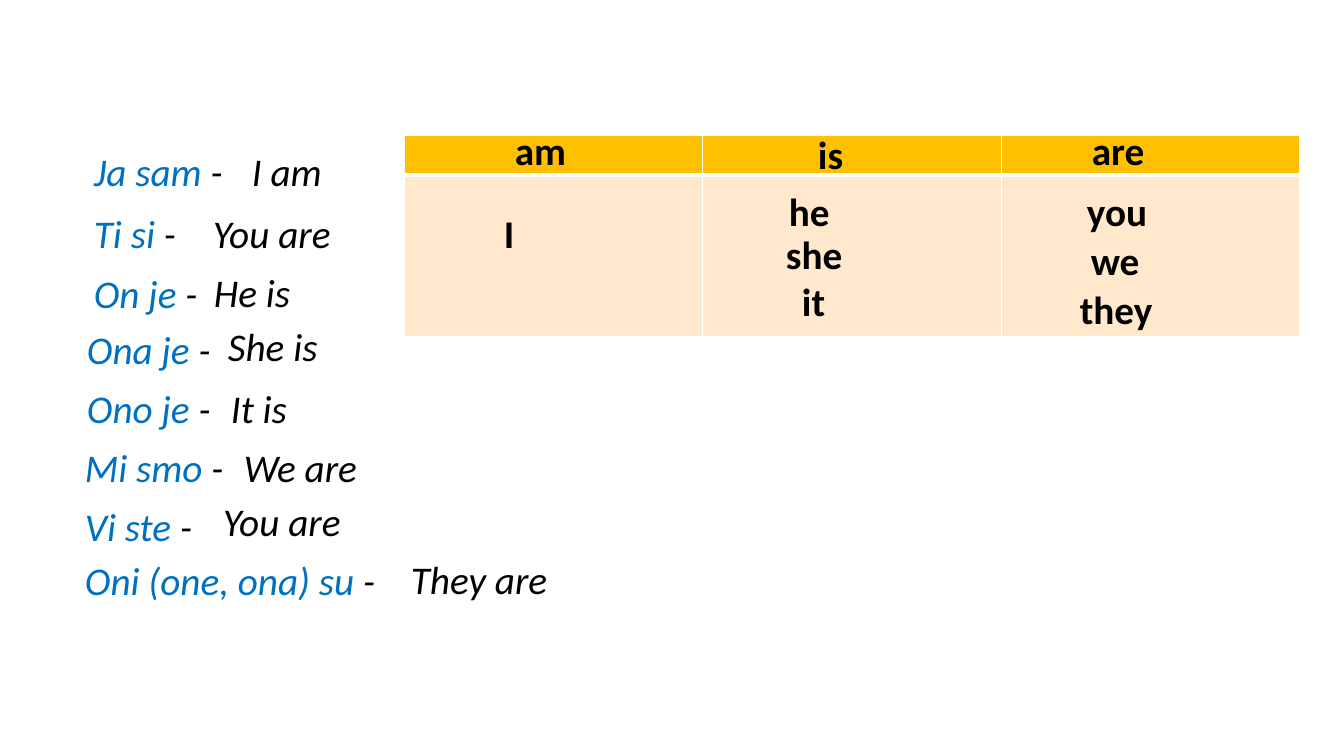
"""Build a slide pairing Croatian and English forms of the verb 'to be'."""
from lxml import etree
from pptx import Presentation
from pptx import util as u
from pptx.dml.color import RGBColor
from pptx.enum import text
from pptx.oxml import ns

BLUE = RGBColor(0x00, 0x70, 0xC0)
BLACK = RGBColor(0x00, 0x00, 0x00)
WHITE = RGBColor(0xFF, 0xFF, 0xFF)
GOLD = RGBColor(0xFF, 0xC0, 0x00)
PEACH = RGBColor(0xFF, 0xE8, 0xCC)

# Croatian (words, left, top, width), English (words, left, top, width)
PAIRS = [
    (("Ja sam ", 84, 142, 158), ("I am", 242, 142, 95)),
    (("Ti si ", 84, 204, 113), ("You are", 203, 204, 139)),
    (("On je ", 84, 264, 127), ("He is", 204, 263, 139)),
    (("Ona je ", 77, 320, 144), ("She is", 218, 317, 139)),
    (("Ono je ", 77, 379, 144), ("It is", 221, 379, 139)),
    (("Mi smo ", 75, 438, 167), ("We are", 234, 438, 139)),
    (("Vi ste ", 75, 497, 136), ("You are", 213, 492, 139)),
    (("Oni (one, ona) su ", 75, 551, 318), ("They are", 401, 550, 168)),
]
TABLE_WORDS = [
    ("am", 505, 121), ("I", 494, 204),
    ("is", 808, 125), ("he", 779, 182), ("she", 776, 225), ("it", 792, 272),
    ("are", 1082, 121), ("you", 1077, 182), ("we", 1081, 231), ("they", 1070, 280),
]
WORD_WIDTH, LINE_HEIGHT = 143, 57
TABLE = (404, 135, 896, 202)
ROWS = [
    (40, GOLD, {"lnL": 1, "lnR": 1, "lnT": 1, "lnB": 3}),
    (162, PEACH, {"lnL": 1, "lnR": 1, "lnT": 3, "lnB": 1}),
]
COLUMN_COUNT = 3
ITALIC = {"name": "Calibri", "size": u.Pt(28), "italic": True}
BOLD = {"name": "Calibri", "size": u.Pt(28), "bold": True}


def px(length):
    return u.Inches(length / 100.8)


def add_words(page, left, top, width, spans, style):
    box = page.shapes.add_textbox(*map(px, (left, top, width, LINE_HEIGHT)))
    box.text_frame.word_wrap = True
    box.text_frame.auto_size = text.MSO_AUTO_SIZE.SHAPE_TO_FIT_TEXT
    para = box.text_frame.paragraphs[0]
    for words, color in spans:
        span = para.add_run()
        span.text = words
        for name, value in style.items():
            setattr(span.font, name, value)
        span.font.color.rgb = color


def add_borders(cell, borders):
    properties = cell._tc.get_or_add_tcPr()
    for place, (side, points) in enumerate(borders.items()):
        line = etree.Element(ns.qn(f"a:{side}"), w=str(u.Pt(points)))
        fill = etree.SubElement(line, ns.qn("a:solidFill"))
        etree.SubElement(fill, ns.qn("a:srgbClr"), val=str(WHITE))
        properties.insert(place, line)


def add_verb_table(page):
    frame = page.shapes.add_table(len(ROWS), COLUMN_COUNT, *map(px, TABLE))
    table = frame.table
    table.horz_banding = False
    for column in table.columns:
        column.width = px(TABLE[2] / COLUMN_COUNT)
    for row, (height, color, borders) in zip(table.rows, ROWS):
        row.height = px(height)
        for cell in row.cells:
            cell.margin_top = cell.margin_bottom = 0
            cell.fill.solid()
            cell.fill.fore_color.rgb = color
            add_borders(cell, borders)


def main():
    deck = Presentation()
    deck.slide_width, deck.slide_height = px(1344), px(756)
    page = deck.slides.add_slide(deck.slide_layouts[6])
    add_verb_table(page)
    for words, left, top in TABLE_WORDS:
        add_words(page, left, top, WORD_WIDTH, [(words, BLACK)], BOLD)
    for (croatian, *place), (english, *answer_place) in PAIRS:
        add_words(page, *place, [(croatian, BLUE), ("-", BLACK)], ITALIC)
        add_words(page, *answer_place, [(english, BLACK)], ITALIC)
    deck.save("out.pptx")


if __name__ == "__main__":
    main()
